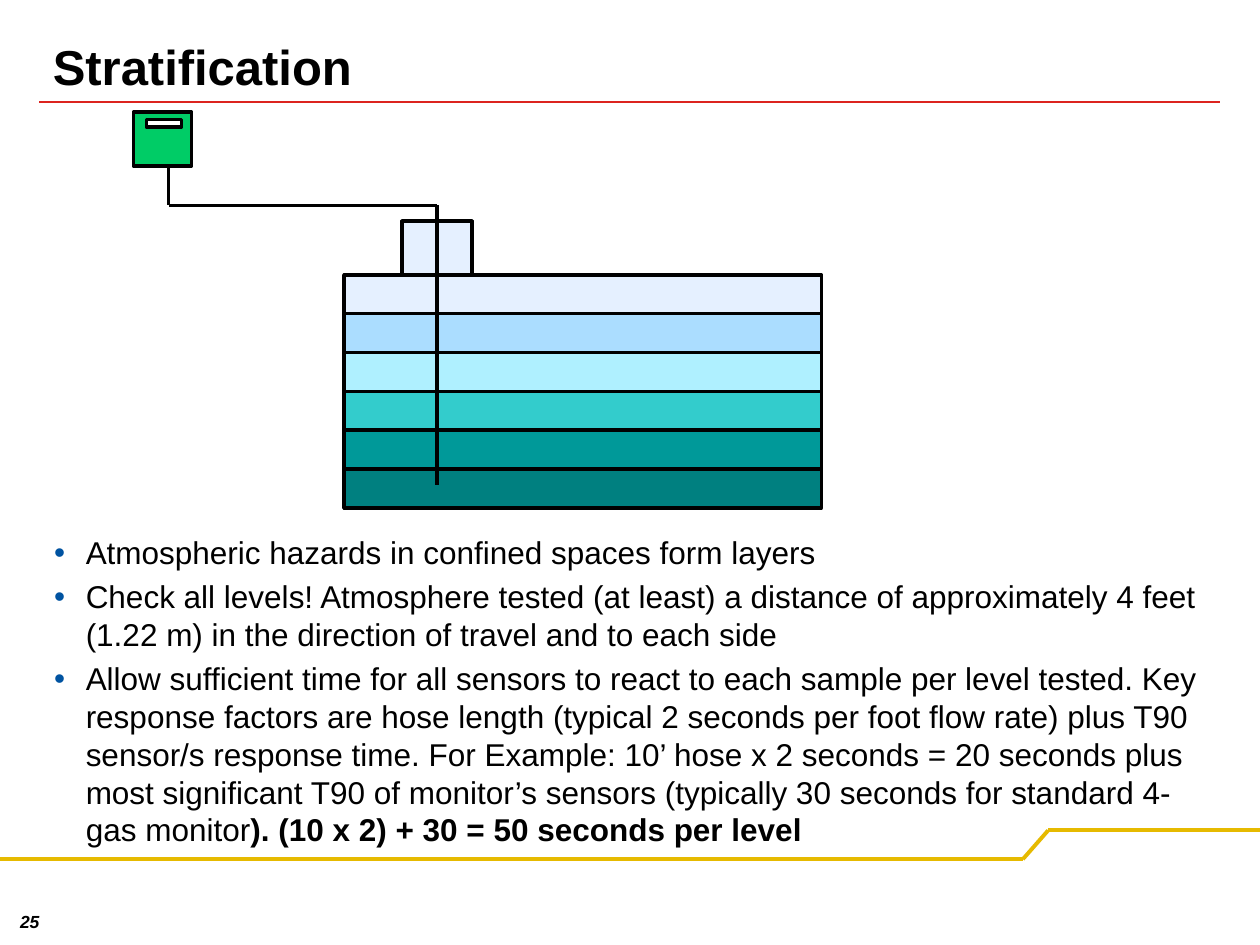
from lxml import etree
from pptx import Presentation
from pptx.dml.color import RGBColor
from pptx.enum.shapes import MSO_CONNECTOR, MSO_SHAPE
from pptx.enum.text import MSO_ANCHOR, PP_ALIGN
from pptx.oxml.ns import qn
from pptx.util import Cm, Pt

LINE, RECT = MSO_CONNECTOR.STRAIGHT, MSO_SHAPE.RECTANGLE
TOP, LEFT, CENTER = MSO_ANCHOR.TOP, PP_ALIGN.LEFT, PP_ALIGN.CENTER

BLACK = RGBColor(0x00, 0x00, 0x00)
WHITE = RGBColor(0xFF, 0xFF, 0xFF)
RED = RGBColor(0xDC, 0x24, 0x1F)
GOLD = RGBColor(0xE6, 0xBA, 0x00)
GREEN = RGBColor(0x00, 0xCC, 0x66)
BLUE = RGBColor(0x00, 0x53, 0xA1)
PALE = RGBColor(0xE5, 0xF0, 0xFF)
LAYERS = [PALE, RGBColor(0xAB, 0xDD, 0xFF), RGBColor(0xAF, 0xF0, 0xFF),
          RGBColor(0x33, 0xCC, 0xCC), RGBColor(0x00, 0x99, 0x99),
          RGBColor(0x00, 0x80, 0x80)]

deck = Presentation()
deck.slide_width, deck.slide_height = Cm(25.4), Cm(19.05)
slide = deck.slides.add_slide(deck.slide_layouts[5])
shapes = slide.shapes


def add_path(points, color, width):
    for start, end in zip(points, points[1:]):
        line = shapes.add_connector(LINE, *[Cm(v) for v in start + end])
        line.line.color.rgb = color
        line.line.width = Pt(width)
        etree.SubElement(line._element.spPr, qn("a:effectLst"))


def set_font(font, size, **more):
    look = {"name": "Arial", "size": Pt(size), **more}
    for key, value in look.items():
        setattr(font, key, value)
    font.color.rgb = BLACK


# Title and its rule
title = shapes.title
place = {"left": 0.81, "top": 0.61, "width": 22.23, "height": 1.3}
for key, value in place.items():
    setattr(title, key, Cm(value))
frame = title.text_frame
frame.text = "Stratification"
frame.vertical_anchor = TOP
frame.margin_top = Cm(0.13)
frame.paragraphs[0].alignment = LEFT
set_font(frame.paragraphs[0].font, 28, bold=True)
add_path([(0.79, 2.06), (24.59, 2.06)], RED, 1)

# Footer line and page number
add_path([(0, 17.32), (20.62, 17.32), (21.13, 16.74), (25.4, 16.74)], GOLD, 2.25)
frame = shapes.add_textbox(Cm(0.13), Cm(18.29), Cm(0.94), Cm(0.64)).text_frame
frame.word_wrap = False
para = frame.paragraphs[0]
para.text = "25"
para.alignment = CENTER
para.line_spacing = 0.9
set_font(para.font, 10, bold=True, italic=True)

# Tank with its neck and layers, and the gas monitor
left, top, wide, high = 6.93, 5.54, 9.63, 4.7
right, base = left + wide, top + high
neck, edge, lid = 8.1, 9.52, 4.45
step = high / len(LAYERS)
boxes = [(neck, lid, edge - neck, top - lid, PALE)]
boxes += [(left, top + i * step, wide, step, color)
          for i, color in enumerate(LAYERS)]
boxes += [(2.69, 2.26, 1.17, 1.09, GREEN), (2.95, 2.41, 0.71, 0.15, WHITE)]
for *spot, color in boxes:
    box = shapes.add_shape(RECT, *[Cm(v) for v in spot])
    box.shadow.inherit = False
    box.fill.solid()
    box.fill.fore_color.rgb = color
    box.line.color.rgb = BLACK
    box.line.width = Pt(2)

# Outline of the tank, then the sample hose
add_path([(neck, lid), (edge, lid), (edge, top), (right, top), (right, base),
          (left, base), (left, top), (neck, top), (neck, lid)], BLACK, 2)
add_path([(3.4, 3.35), (3.4, 4.14), (8.81, 4.14), (8.81, 9.78)], BLACK, 2)

# Bullets: each point is plain text and a bold ending
POINTS = [
    ("Atmospheric hazards in confined spaces form layers", ""),
    ("Check all levels! Atmosphere tested (at least) a distance of approximately "
     "4 feet (1.22 m) in the direction of travel and to each side", ""),
    ("Allow sufficient time for all sensors to react to each sample per level "
     "tested. Key response factors are hose length (typical 2 seconds per foot "
     "flow rate) plus T90 sensor/s response time. For Example: 10’ hose x 2 "
     "seconds = 20 seconds plus most significant T90 of monitor’s sensors "
     "(typically 30 seconds for standard 4-gas monitor",
     "). (10 x 2) + 30 = 50 seconds per level"),
]
frame = shapes.add_textbox(Cm(0.84), Cm(10.62), Cm(23.7), Cm(2.64)).text_frame
frame.word_wrap = True
frame.margin_top = Cm(0.13)
for i, (plain, strong) in enumerate(POINTS):
    para = frame.add_paragraph() if i else frame.paragraphs[0]
    para.space_before = Pt(3.6 if i else 0)
    props = para._p.get_or_add_pPr()
    props.set("marL", str(Cm(0.64)))
    props.set("indent", str(-Cm(0.64)))
    tint = etree.SubElement(props, qn("a:buClr"))
    etree.SubElement(tint, qn("a:srgbClr"), val=str(BLUE))
    etree.SubElement(props, qn("a:buFont"), typeface="Arial")
    etree.SubElement(props, qn("a:buChar"), char="•")
    for text, bold in ((plain, False), (strong, True)):
        if text:
            run = para.add_run()
            run.text = text
            set_font(run.font, 18, bold=bold)

deck.save("out.pptx")
